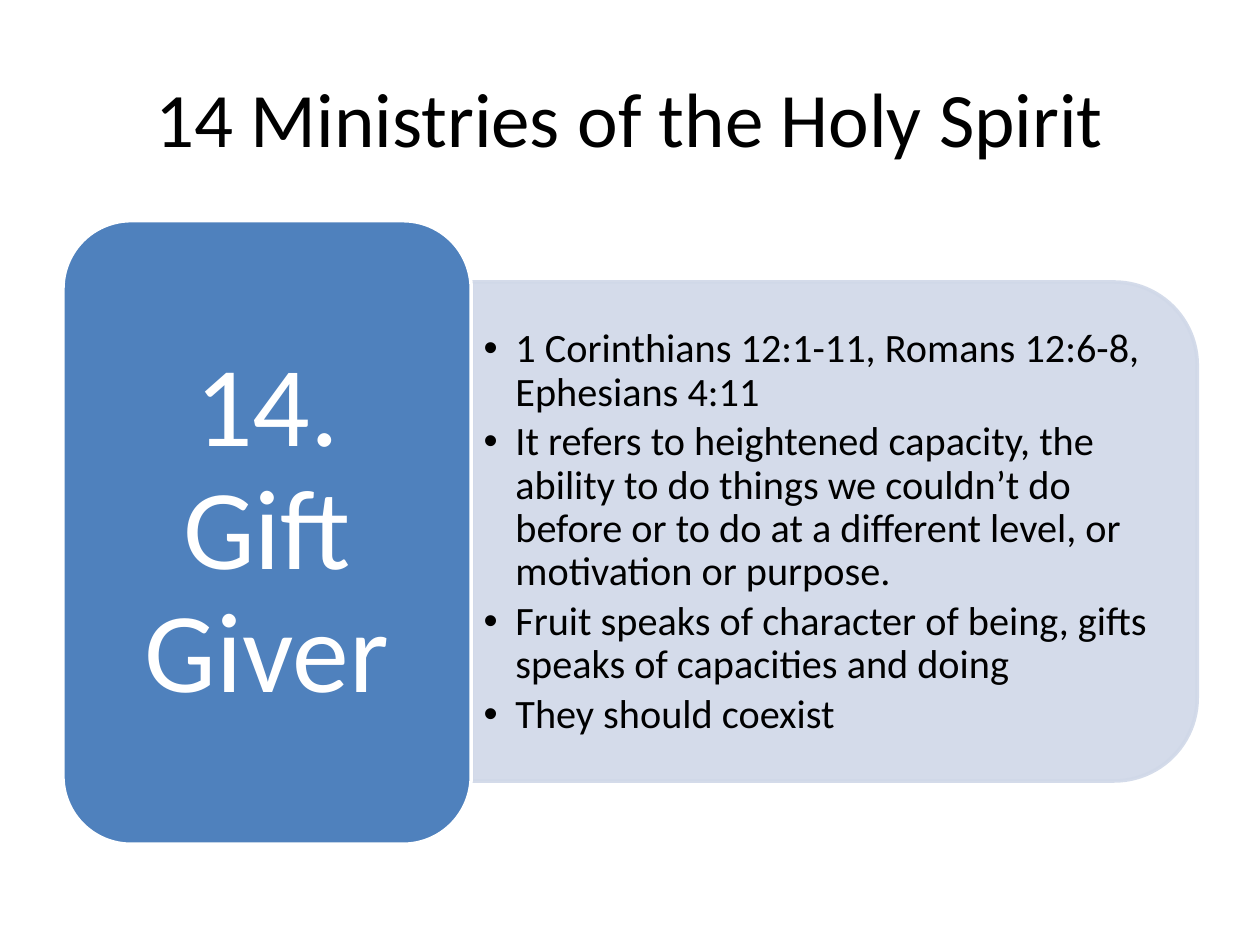
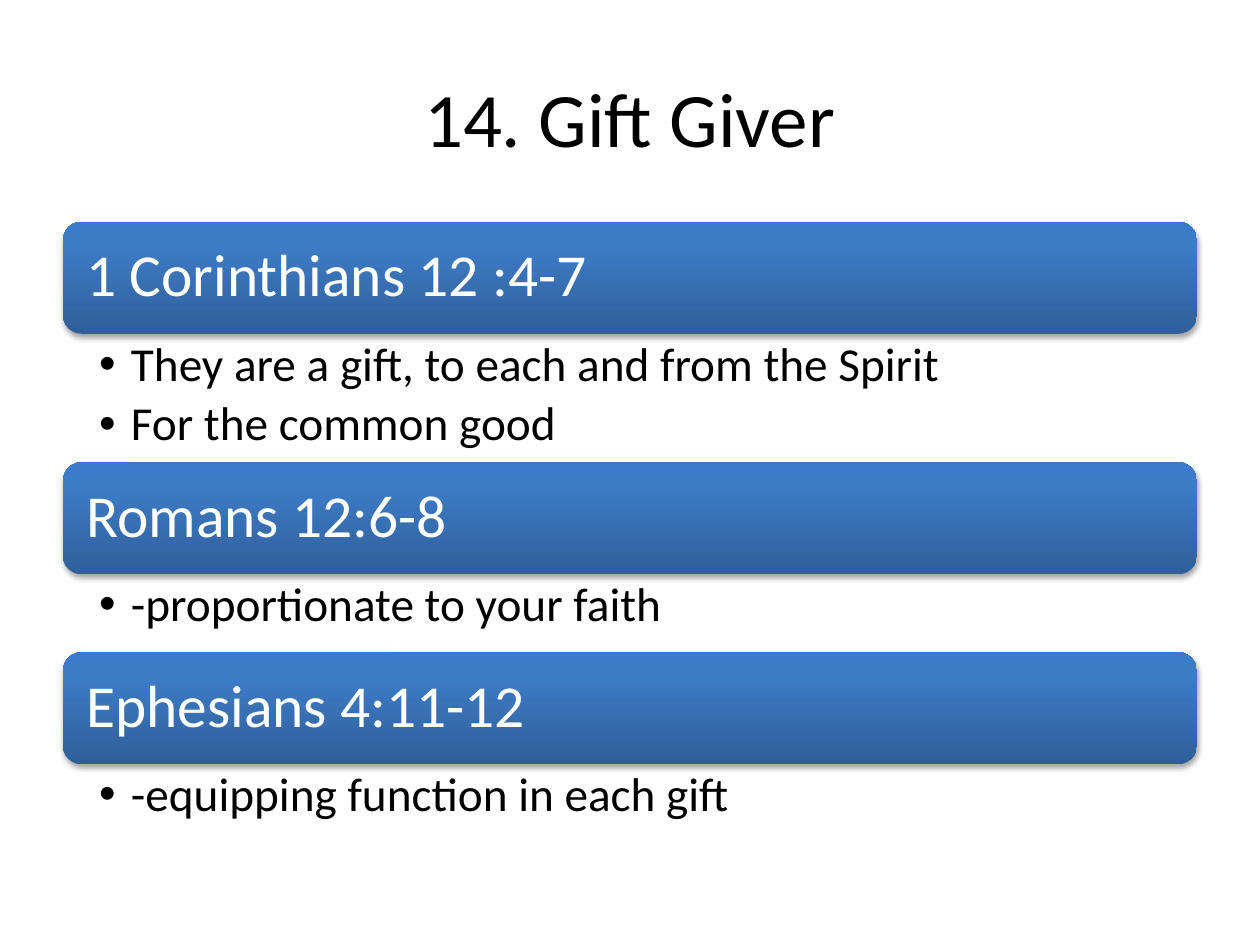
"""Build two slides on the Holy Spirit as the giver of gifts."""
from lxml import etree
from pptx import Presentation
from pptx.dml.color import RGBColor
from pptx.enum.shapes import MSO_SHAPE
from pptx.enum.text import MSO_ANCHOR, MSO_AUTO_SIZE, PP_ALIGN
from pptx.oxml import parse_xml
from pptx.oxml.ns import nsdecls, qn
from pptx.util import Cm, Pt

FONT = "Calibri"
BLACK = RGBColor(0x00, 0x00, 0x00)
WHITE = RGBColor(0xFF, 0xFF, 0xFF)
BLUE = RGBColor(0x4F, 0x81, 0xBD)
PALE_BLUE = RGBColor(0xD0, 0xD8, 0xE8)
GRADIENT_STOPS = [
    (0, RGBColor(0x2F, 0x5F, 0x99)),
    (80, RGBColor(0x3D, 0x7C, 0xC7)),
    (100, RGBColor(0x3A, 0x7C, 0xCB)),
]
LEFT, CONTENT_WIDTH = 1.27, 22.86


def fill_text(shape, lines, size, color, anchor, margins, align=PP_ALIGN.LEFT, gap=0, bullets=False):
    text_frame = shape.text_frame
    text_frame.text = "\n".join(lines)
    text_frame.word_wrap = True
    text_frame.auto_size = MSO_AUTO_SIZE.NONE
    text_frame.vertical_anchor = anchor
    left, top, right, bottom = margins
    text_frame.margin_left, text_frame.margin_top = Cm(left), Cm(top)
    text_frame.margin_right, text_frame.margin_bottom = Cm(right), Cm(bottom)
    for paragraph in text_frame.paragraphs:
        paragraph.alignment = align
        paragraph.line_spacing = 0.9
        paragraph.space_before = Pt(0)
        paragraph.space_after = Pt(gap)
        if bullets:
            properties = paragraph._p.get_or_add_pPr()
            properties.set("marL", str(Cm(0.64)))
            properties.set("indent", str(Cm(-0.64)))
            etree.SubElement(properties, qn("a:buFont")).set("typeface", "Arial")
            etree.SubElement(properties, qn("a:buChar")).set("char", "•")
        for run in paragraph.runs:
            run.font.name = FONT
            run.font.size = Pt(size)
            run.font.color.rgb = color


def add_titled_slide(layout, title):
    slide = presentation.slides.add_slide(layout)
    shape = slide.shapes.title
    shape.left, shape.top = Cm(LEFT), Cm(0.76)
    shape.width, shape.height = Cm(CONTENT_WIDTH), Cm(3.18)
    shape.text_frame.text = title
    paragraph = shape.text_frame.paragraphs[0]
    paragraph.alignment = PP_ALIGN.CENTER
    font = paragraph.runs[0].font
    font.name, font.size, font.color.rgb = FONT, Pt(44), BLACK
    return slide


presentation = Presentation()
presentation.slide_width, presentation.slide_height = Cm(25.4), Cm(19.05)

slide = add_titled_slide(presentation.slide_layouts[1], "14 Ministries of the Holy Spirit")
panel = slide.shapes.add_shape(
    MSO_SHAPE.ROUND_2_SAME_RECTANGLE, Cm(11.79), Cm(3.4), Cm(10.06), Cm(14.63))
panel.rotation = 90
panel.shadow.inherit = False
panel.fill.solid()
panel.fill.fore_color.rgb = PALE_BLUE
panel.line.color.rgb = PALE_BLUE
panel.line.width = Pt(2)
for color_element in panel.element.spPr.iter(qn("a:srgbClr")):
    etree.SubElement(color_element, qn("a:alpha")).set("val", "90000")

body = slide.placeholders[1]
body.left, body.top, body.width, body.height = Cm(9.5), Cm(6.2), Cm(14.15), Cm(9.07)
fill_text(body, [
    "1 Corinthians 12:1-11, Romans 12:6-8, Ephesians 4:11",
    "It refers to heightened capacity, the ability to do things we couldn’t do before "
    "or to do at a different level, or motivation or purpose.",
    "Fruit speaks of character of being, gifts speaks of capacities and doing",
    "They should coexist",
], 23, BLACK, MSO_ANCHOR.MIDDLE, (0.25, 0.13, 0.25, 0.13), gap=3.5, bullets=True)
panel.element.addnext(body.element)

ministry = slide.shapes.add_shape(
    MSO_SHAPE.ROUNDED_RECTANGLE, Cm(LEFT), Cm(4.45), Cm(8.23), Cm(12.57))
ministry.shadow.inherit = False
ministry.fill.solid()
ministry.fill.fore_color.rgb = BLUE
ministry.line.color.rgb = WHITE
ministry.line.width = Pt(2)
fill_text(ministry, ["14. Gift Giver"], 65, WHITE, MSO_ANCHOR.MIDDLE,
          (0.69, 0.35, 0.69, 0.35), PP_ALIGN.CENTER)

slide = add_titled_slide(presentation.slide_layouts[5], "14. Gift Giver")
passages = [
    ("1 Corinthians 12 :4-7", 2.59,
     ["They are a gift, to each and from the Spirit", "For the common good"]),
    ("Romans 12:6-8", 1.57, ["-proportionate to your faith"]),
    ("Ephesians 4:11-12", 1.57, ["-equipping function in each gift"]),
]
stops = "".join(
    f'<a:gs pos="{position * 1000}"><a:srgbClr val="{color}"/></a:gs>'
    for position, color in GRADIENT_STOPS)
bar_height = 2.26
top = 4.47
for reference, list_height, points in passages:
    bar = slide.shapes.add_shape(
        MSO_SHAPE.ROUNDED_RECTANGLE, Cm(LEFT), Cm(top), Cm(CONTENT_WIDTH), Cm(bar_height))
    bar.line.fill.background()
    bar.shadow.inherit = False
    bar.fill.solid()
    properties = bar.element.spPr
    properties.replace(properties.find(qn("a:solidFill")), parse_xml(
        f'<a:gradFill {nsdecls("a")} rotWithShape="1"><a:gsLst>{stops}</a:gsLst>'
        '<a:lin ang="16200000" scaled="0"/></a:gradFill>'))
    properties.find(qn("a:effectLst")).append(parse_xml(
        f'<a:outerShdw {nsdecls("a")} blurRad="{Pt(3.1)}" dist="{Pt(1.8)}" dir="5400000" '
        'rotWithShape="0"><a:srgbClr val="000000"><a:alpha val="35000"/></a:srgbClr></a:outerShdw>'))
    fill_text(bar, [reference], 34, WHITE, MSO_ANCHOR.MIDDLE, (0.36, 0.36, 0.36, 0.36))
    top += bar_height

    point_list = slide.shapes.add_textbox(Cm(LEFT), Cm(top), Cm(CONTENT_WIDTH), Cm(list_height))
    fill_text(point_list, points, 27, BLACK, MSO_ANCHOR.TOP,
              (0.73, 0.13, 0.66, 0.13), gap=5, bullets=True)
    top += list_height

presentation.save("out.pptx")
